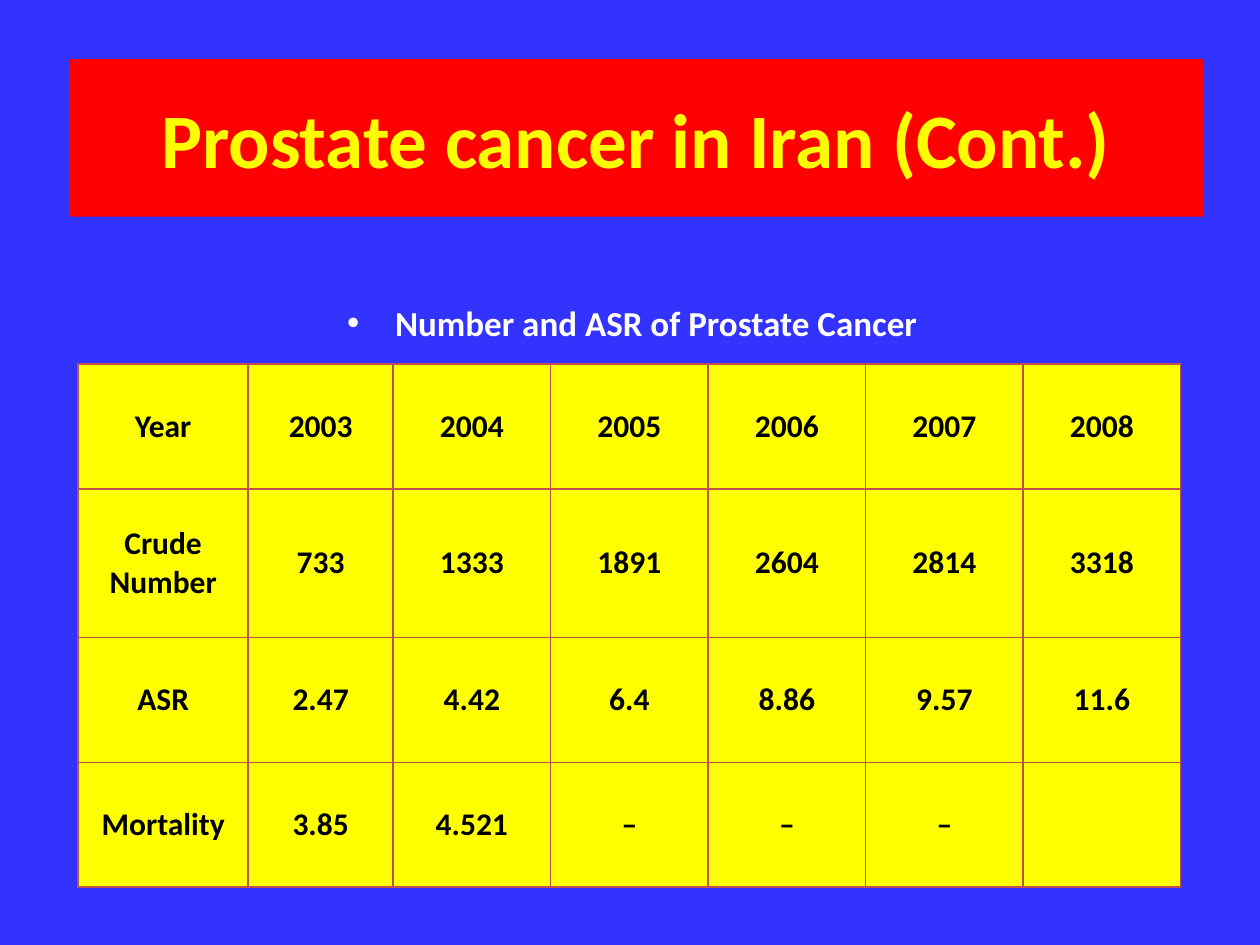
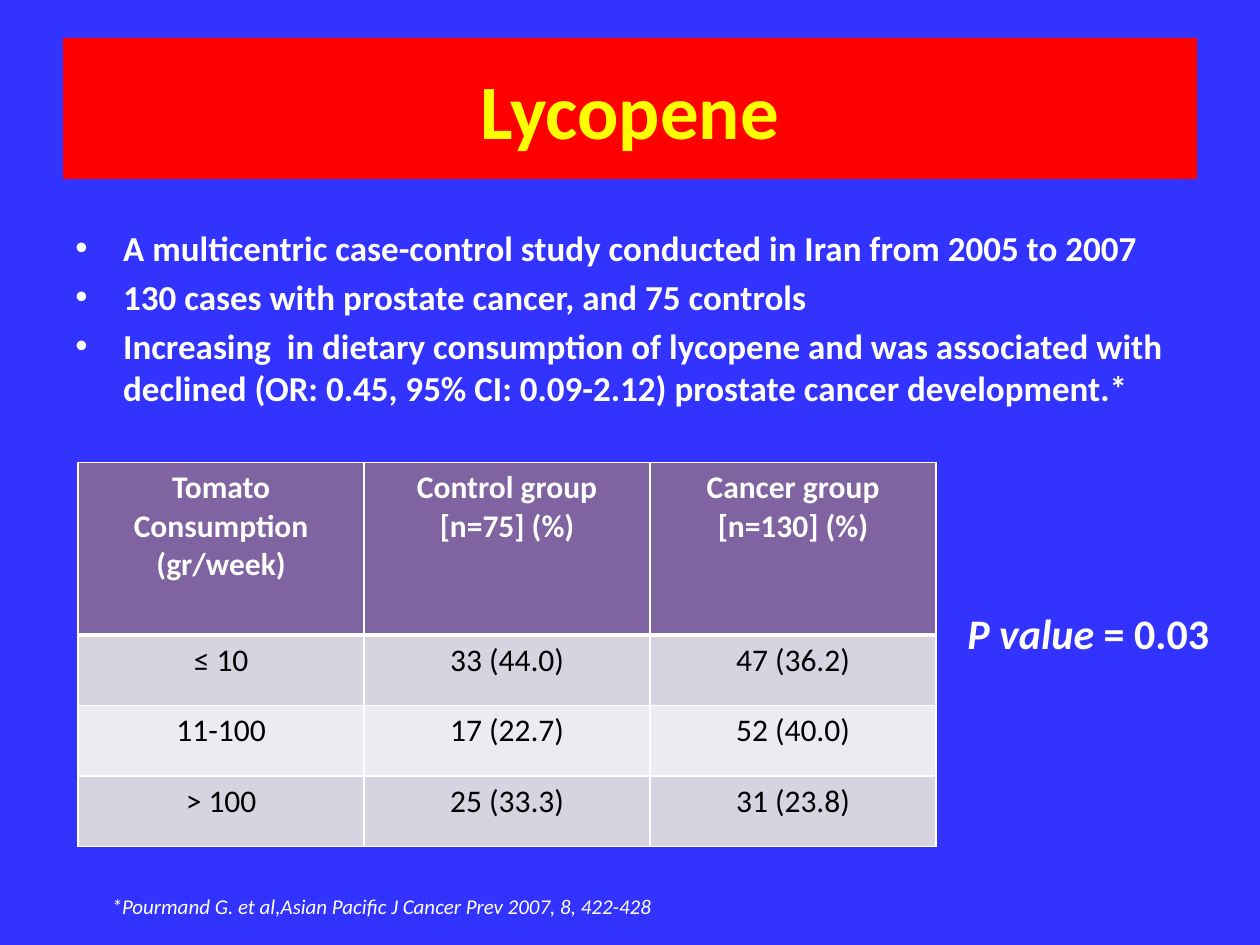
import pptx
import pptx.util
import pptx.dml.color
import pptx.enum.text
import pptx.oxml
import pptx.oxml.ns
import lxml.etree

Inches = pptx.util.Inches
Pt = pptx.util.Pt
RGBColor = pptx.dml.color.RGBColor
Align = pptx.enum.text.PP_ALIGN
Anchor = pptx.enum.text.MSO_ANCHOR
qn = pptx.oxml.ns.qn

FONT = "Calibri"
COLORS = {
    "background": "3333FF",
    "band": "FF0000",
    "yellow": "FFFF00",
    "white": "FFFFFF",
    "black": "000000",
    "grid": "C0504D",
    "header": "8064A2",
    "odd_row": "D8D3E0",
    "even_row": "EDEAF0",
}


def format_text(text_frame, size, color, bold=False, italic=False, align=Align.LEFT, bullet=False):
    text_frame.word_wrap = True
    for paragraph in text_frame.paragraphs:
        paragraph.alignment = align
        if bullet:
            paragraph.space_before = Pt(size * 0.2)
            properties = paragraph._p.get_or_add_pPr()
            properties.set("marL", str(Inches(0.38)))
            properties.set("indent", str(-Inches(0.38)))
            lxml.etree.SubElement(properties, qn("a:buFont"), typeface="Arial")
            lxml.etree.SubElement(properties, qn("a:buChar"), char="•")
        for run in paragraph.runs:
            run.font.name = FONT
            run.font.size = Pt(size)
            run.font.bold = bold
            run.font.italic = italic
            run.font.color.rgb = RGBColor.from_string(COLORS[color])


def add_grid(slide, left, top, widths, heights, rows, row_styles, border, anchor):
    table = slide.shapes.add_table(
        len(rows), len(widths), Inches(left), Inches(top),
        Inches(sum(widths)), Inches(sum(heights))).table
    for column, width in zip(table.columns, widths):
        column.width = Inches(width)
    for row_index, (row, height) in enumerate(zip(rows, heights)):
        table.rows[row_index].height = Inches(height)
        fill, color, bold, bottom_width = row_styles[row_index]
        top_width = row_styles[row_index - 1][3] if row_index else 1
        edges = {"a:lnL": 1, "a:lnR": 1, "a:lnT": top_width, "a:lnB": bottom_width}
        for column_index, text in enumerate(row):
            cell = table.cell(row_index, column_index)
            cell.text_frame.text = text
            format_text(cell.text_frame, 18, color, bold, align=Align.CENTER)
            cell.vertical_anchor = anchor
            properties = cell._tc.get_or_add_tcPr()
            for edge, width in edges.items():
                line = lxml.etree.SubElement(properties, qn(edge), w=str(Pt(width)))
                solid = lxml.etree.SubElement(line, qn("a:solidFill"))
                lxml.etree.SubElement(solid, qn("a:srgbClr"), val=COLORS[border])
            cell.fill.solid()
            cell.fill.fore_color.rgb = RGBColor.from_string(COLORS[fill])


presentation = pptx.Presentation()
presentation.slide_width = Inches(10)
presentation.slide_height = Inches(7.5)

slides = []
for title_text, left, top, height in [
    ("Prostate cancer in Iran (Cont.)", 0.55, 0.47, 1.25),
    ("Lycopene", 0.5, 0.3, 1.12),
]:
    slide = presentation.slides.add_slide(presentation.slide_layouts[5])
    slide.background.fill.solid()
    slide.background.fill.fore_color.rgb = RGBColor.from_string(COLORS["background"])
    title = slide.shapes.title
    title.left, title.top = Inches(left), Inches(top)
    title.width, title.height = Inches(9), Inches(height)
    title.fill.solid()
    title.fill.fore_color.rgb = RGBColor.from_string(COLORS["band"])
    title.text_frame.text = title_text
    title.text_frame.vertical_anchor = Anchor.MIDDLE
    format_text(title.text_frame, 44, "yellow", bold=True, align=Align.CENTER)
    slides.append(slide)
iran_slide, lycopene_slide = slides

caption = iran_slide.shapes.add_textbox(Inches(0.55), Inches(2.34), Inches(9), Inches(0.44))
caption.text_frame.text = "Number and ASR of Prostate Cancer "
format_text(caption.text_frame, 20, "white", bold=True, align=Align.CENTER, bullet=True)

iran_rows = [
    ["Year", "2003", "2004", "2005", "2006", "2007", "2008"],
    ["Crude Number", "733", "1333", "1891", "2604", "2814", "3318"],
    ["ASR", "2.47", "4.42", "6.4", "8.86", "9.57", "11.6"],
    ["Mortality", "3.85", "4.521", "–", "–", "–", ""],
]
add_grid(iran_slide, 0.62, 2.89, [1.35, 1.15] + [1.25] * 5, [0.99, 1.18, 0.99, 0.99],
         iran_rows, [("yellow", "black", True, 1)] * 4, "grid", Anchor.MIDDLE)

findings = lycopene_slide.shapes.add_textbox(Inches(0.5), Inches(1.75), Inches(9), Inches(4.95))
findings.text_frame.text = "\n".join([
    "A multicentric case-control study conducted in Iran from 2005 to 2007",
    "130 cases with prostate cancer, and 75 controls",
    "Increasing  in dietary consumption of lycopene and was associated with "
    "declined (OR: 0.45, 95% CI: 0.09-2.12) prostate cancer development.*",
])
format_text(findings.text_frame, 20, "white", bold=True, bullet=True)

tomato_rows = [
    ["Tomato Consumption (gr/week)", "Control group [n=75] (%)", "Cancer group [n=130] (%)"],
    ["≤ 10", "33 (44.0)", "47 (36.2)"],
    ["11-100", "17 (22.7)", "52 (40.0)"],
    ["> 100", "25 (33.3)", "31 (23.8)"],
]
tomato_styles = [
    ("header", "white", True, 3),
    ("odd_row", "black", False, 1),
    ("even_row", "black", False, 1),
    ("odd_row", "black", False, 1),
]
add_grid(lycopene_slide, 0.62, 3.67, [2.27] * 3, [1.37] + [0.56] * 3,
         tomato_rows, tomato_styles, "white", Anchor.TOP)

p_value = lycopene_slide.shapes.add_textbox(Inches(7.58), Inches(4.77), Inches(2.27), Inches(0.5))
p_value.text_frame.text = "P value "
p_value.text_frame.paragraphs[0].add_run().text = "= 0.03"
format_text(p_value.text_frame, 24, "white", bold=True)
p_value.text_frame.paragraphs[0].runs[0].font.italic = True

citation = lycopene_slide.shapes.add_textbox(Inches(0.75), Inches(7.04), Inches(5.33), Inches(0.3))
citation.text_frame.text = " *Pourmand G. et al,Asian Pacific J Cancer Prev 2007, 8, 422-428"
format_text(citation.text_frame, 12, "white", italic=True)

presentation.save("out.pptx")
